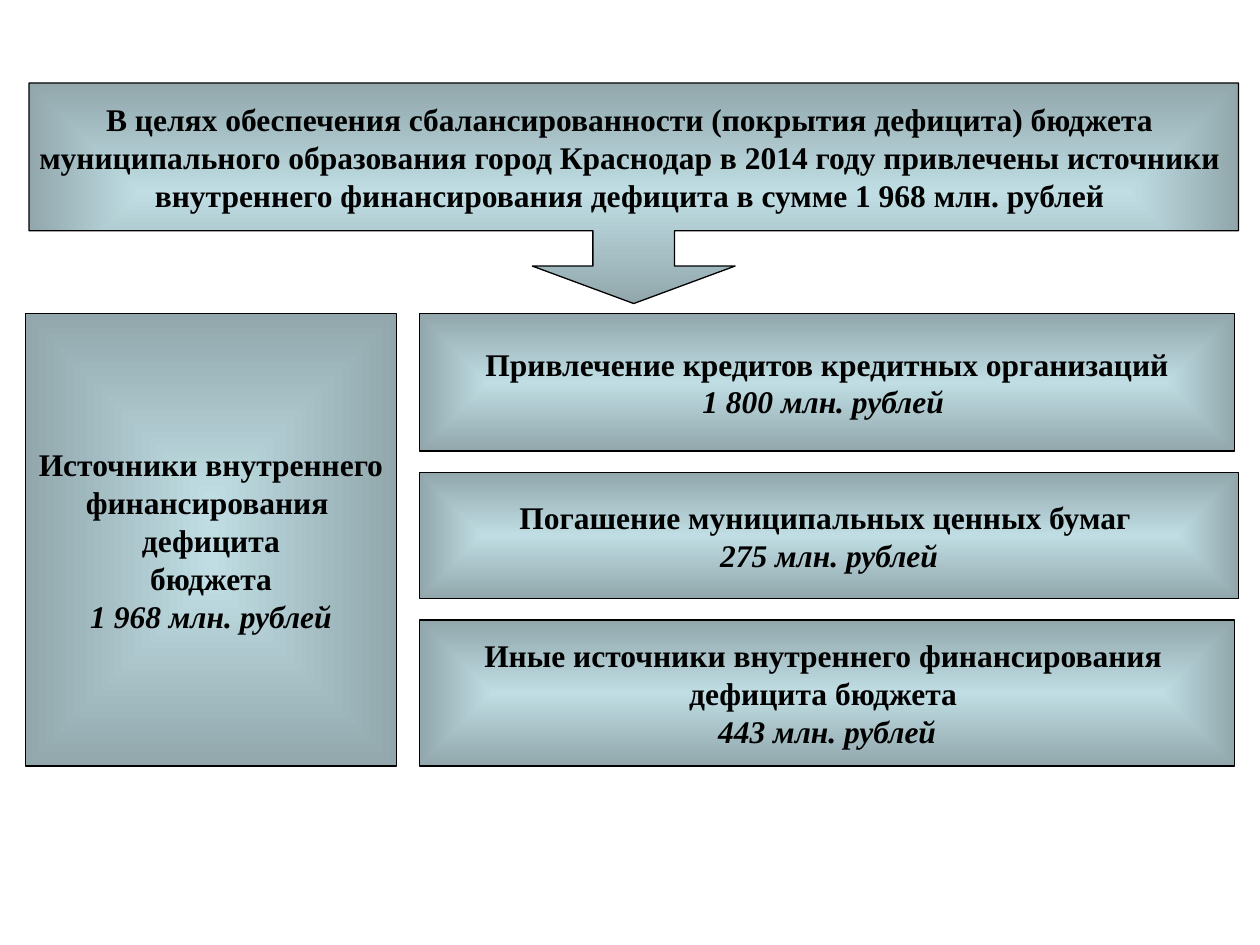
from dataclasses import dataclass

from pptx import Presentation
from pptx import util as u
from pptx.dml.color import RGBColor
from pptx.enum import shapes, text
from pptx.oxml import ns, parse_xml
from pptx.slide import Slide


@dataclass(frozen=True)
class Theme:
    center: str = "BFDDE3"
    edge: str = "91A7AC"
    ink: str = "000000"
    font: str = "Times New Roman"
    size: float = 18
    line: float = 0.75


@dataclass(frozen=True)
class Box:
    col: float
    row: float
    cols: float
    rows: float
    lines: tuple[str, ...]
    amount: str = ""
    kind: shapes.MSO_SHAPE = shapes.MSO_SHAPE.RECTANGLE
    adjustments: tuple[float, ...] = ()


THEME = Theme()
WIDTH, HEIGHT = u.Inches(10), u.Inches(7.5)
COL, ROW = WIDTH / 100, HEIGHT / 100
LEFT, RIGHT, TOP = 2, 33.3, 33.2

BOXES = (
    Box(LEFT, TOP, 29.5, 47.87,
        ("Источники внутреннего", "финансирования ", "дефицита", "бюджета"),
        "1 968 млн. рублей"),
    Box(RIGHT, 50, 65, 13.33,
        ("Погашение муниципальных ценных бумаг ",), "275 млн. рублей"),
    Box(RIGHT, TOP, 64.7, 14.53,
        ("Привлечение кредитов кредитных организаций",), "1 800 млн. рублей "),
    Box(RIGHT, 65.6, 64.7, 15.47,
        ("Иные источники внутреннего финансирования ", "дефицита бюджета "),
        "443 млн. рублей"),
    Box(2.3, 8.8, 96, 23.33,
        ("В целях обеспечения сбалансированности (покрытия дефицита) бюджета ",
         "муниципального образования город Краснодар в 2014 году привлечены источники ",
         "внутреннего финансирования дефицита в сумме 1 968 млн. рублей "),
        kind=shapes.MSO_SHAPE.DOWN_ARROW_CALLOUT,
        adjustments=(0.37, 0.46, 0.17, 0.67)),
)


def fill_from_center(s) -> None:
    s.fill.gradient()
    for stop, position, color in zip(s.fill.gradient_stops, (0, 1), (THEME.center, THEME.edge)):
        stop.position = position
        stop.color.rgb = RGBColor.from_string(color)
    gradient = s._element.spPr.find(ns.qn("a:gradFill"))
    gradient.replace(gradient.find(ns.qn("a:lin")), parse_xml(
        f'<a:path {ns.nsdecls("a")} path="shape">'
        '<a:fillToRect l="50000" t="50000" r="50000" b="50000"/></a:path>'))


def write_line(p, line: str, italic: bool) -> None:
    p.alignment = text.PP_ALIGN.CENTER
    r = p.add_run()
    r.text = line
    formats = {"name": THEME.font, "size": u.Pt(THEME.size), "bold": True, "italic": italic}
    for name, value in formats.items():
        setattr(r.font, name, value)
    r.font.color.rgb = RGBColor.from_string(THEME.ink)


def draw_box(slide: Slide, box: Box) -> None:
    s = slide.shapes.add_shape(
        box.kind, round(box.col * COL), round(box.row * ROW),
        round(box.cols * COL), round(box.rows * ROW))
    for i, value in enumerate(box.adjustments):
        s.adjustments[i] = value
    s.shadow.inherit = False
    fill_from_center(s)
    s.line.color.rgb = RGBColor.from_string(THEME.ink)
    s.line.width = u.Pt(THEME.line)
    tf = s.text_frame
    for name, value in {"word_wrap": False, "vertical_anchor": text.MSO_ANCHOR.MIDDLE}.items():
        setattr(tf, name, value)
    lines = [(line, False) for line in box.lines]
    if box.amount:
        lines.append((box.amount, True))
    for i, (line, italic) in enumerate(lines):
        p = tf.add_paragraph() if i else tf.paragraphs[0]
        write_line(p, line, italic)


def main() -> None:
    prs = Presentation()
    prs.slide_width, prs.slide_height = WIDTH, HEIGHT
    slide = prs.slides.add_slide(prs.slide_layouts[6])
    for box in BOXES:
        draw_box(slide, box)
    prs.save("out.pptx")


if __name__ == "__main__":
    main()
